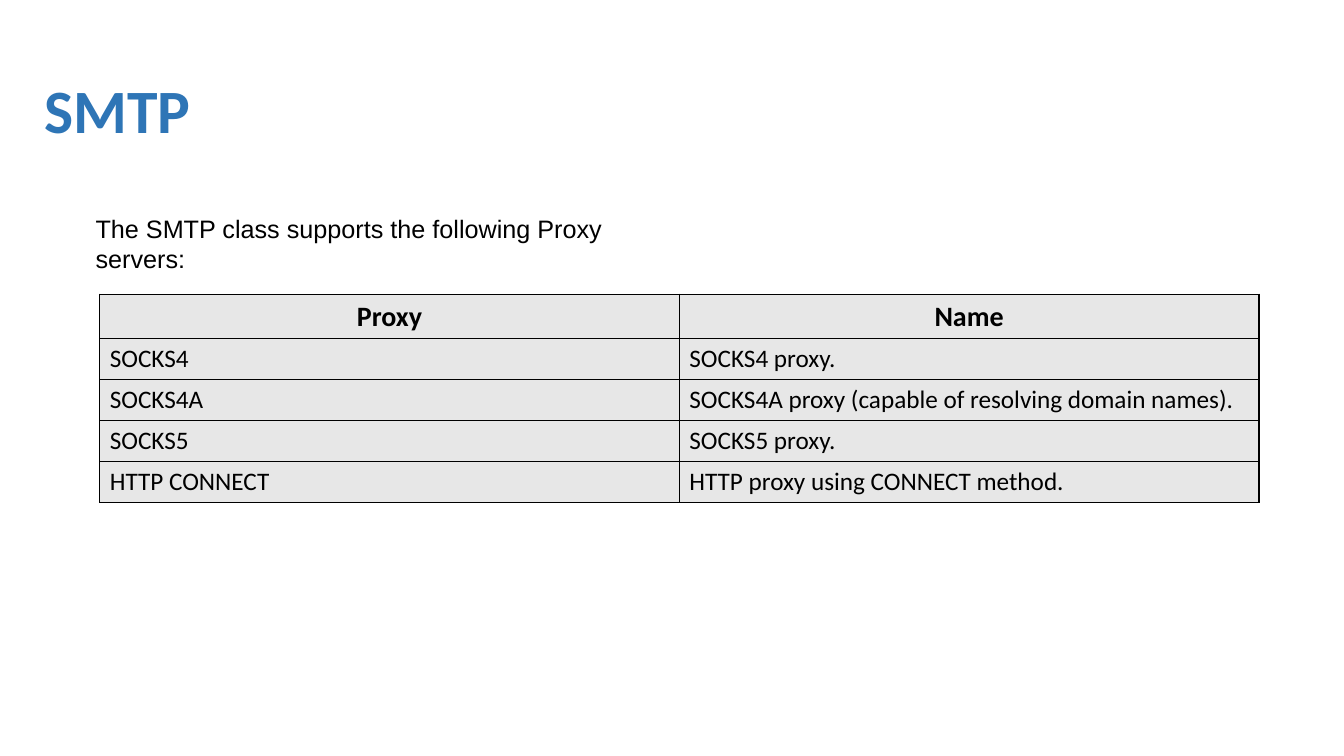
import pptx
import pptx.dml.color
import pptx.enum.text
import pptx.oxml
import pptx.util
from pptx.oxml.ns import nsdecls

Pt = pptx.util.Pt
ALIGN = pptx.enum.text.PP_ALIGN
ANCHOR = pptx.enum.text.MSO_ANCHOR

TITLE = "SMTP"
INTRO = "The SMTP class supports the following Proxy servers:"
PROXIES = [
    ("Proxy", "Name"),
    ("SOCKS4", "SOCKS4 proxy."),
    ("SOCKS4A", "SOCKS4A proxy (capable of resolving domain names)."),
    ("SOCKS5", "SOCKS5 proxy."),
    ("HTTP CONNECT", "HTTP proxy using CONNECT method."),
]

BLUE, BLACK, GREY = "2E75B6", "000000", "E7E7E7"
TABLE_LEFT, TABLE_TOP, COLUMN_WIDTH = 71.25, 210.25, 414
HEADER_HEIGHT, ROW_HEIGHT = 31.5, 29.25
BORDER_WIDTH = 0.96


def color(value):
    return pptx.dml.color.RGBColor.from_string(value)


def write(paragraph, text, font_name, size, value, bold=False):
    run = paragraph.add_run()
    run.text = text
    run.font.name = font_name
    run.font.size = Pt(size)
    run.font.bold = bold
    run.font.color.rgb = color(value)


def add_borders(cell):
    properties = cell._tc.get_or_add_tcPr()
    for position, side in enumerate(("lnL", "lnR", "lnT", "lnB")):
        # Border lines must precede the cell fill in the schema order.
        properties.insert(position, pptx.oxml.parse_xml(
            f'<a:{side} {nsdecls("a")} w="{Pt(BORDER_WIDTH)}"><a:solidFill>'
            f'<a:srgbClr val="{BLACK}"/></a:solidFill></a:{side}>'))


def add_title(slide):
    title = slide.shapes.title
    title.left, title.top, title.width, title.height = Pt(24.5), Pt(28.8), Pt(913), Pt(104.4)
    frame = title.text_frame
    frame.auto_size = pptx.enum.text.MSO_AUTO_SIZE.NONE
    frame.vertical_anchor = ANCHOR.MIDDLE
    paragraph = frame.paragraphs[0]
    paragraph.alignment = ALIGN.LEFT
    paragraph.line_spacing = 0.9
    write(paragraph, TITLE, "Calibri", 44, BLUE, bold=True)


def add_proxy_table(slide):
    heights = [HEADER_HEIGHT] + [ROW_HEIGHT] * (len(PROXIES) - 1)
    columns = len(PROXIES[0])
    table = slide.shapes.add_table(
        len(PROXIES), columns, Pt(TABLE_LEFT), Pt(TABLE_TOP),
        Pt(COLUMN_WIDTH * columns), Pt(sum(heights))).table
    for row_index, (texts, height) in enumerate(zip(PROXIES, heights)):
        table.rows[row_index].height = Pt(height)
        header = row_index == 0
        for column_index, text in enumerate(texts):
            cell = table.cell(row_index, column_index)
            cell.fill.solid()
            cell.fill.fore_color.rgb = color(GREY)
            add_borders(cell)
            paragraph = cell.text_frame.paragraphs[0]
            paragraph.alignment = ALIGN.CENTER if header else ALIGN.LEFT
            write(paragraph, text, "Calibri", 20 if header else 18, BLACK, bold=header)


def add_intro(slide):
    box = slide.shapes.add_textbox(Pt(61.2), Pt(149), Pt(442), Pt(50))
    box.text_frame.word_wrap = True
    write(box.text_frame.paragraphs[0], INTRO, "Arial", 18, BLACK)


def main():
    presentation = pptx.Presentation()
    presentation.slide_width, presentation.slide_height = Pt(960), Pt(540)
    slide = presentation.slides.add_slide(presentation.slide_layouts.get_by_name("Title Only"))
    add_title(slide)
    add_proxy_table(slide)
    add_intro(slide)
    presentation.save("out.pptx")


if __name__ == "__main__":
    main()
